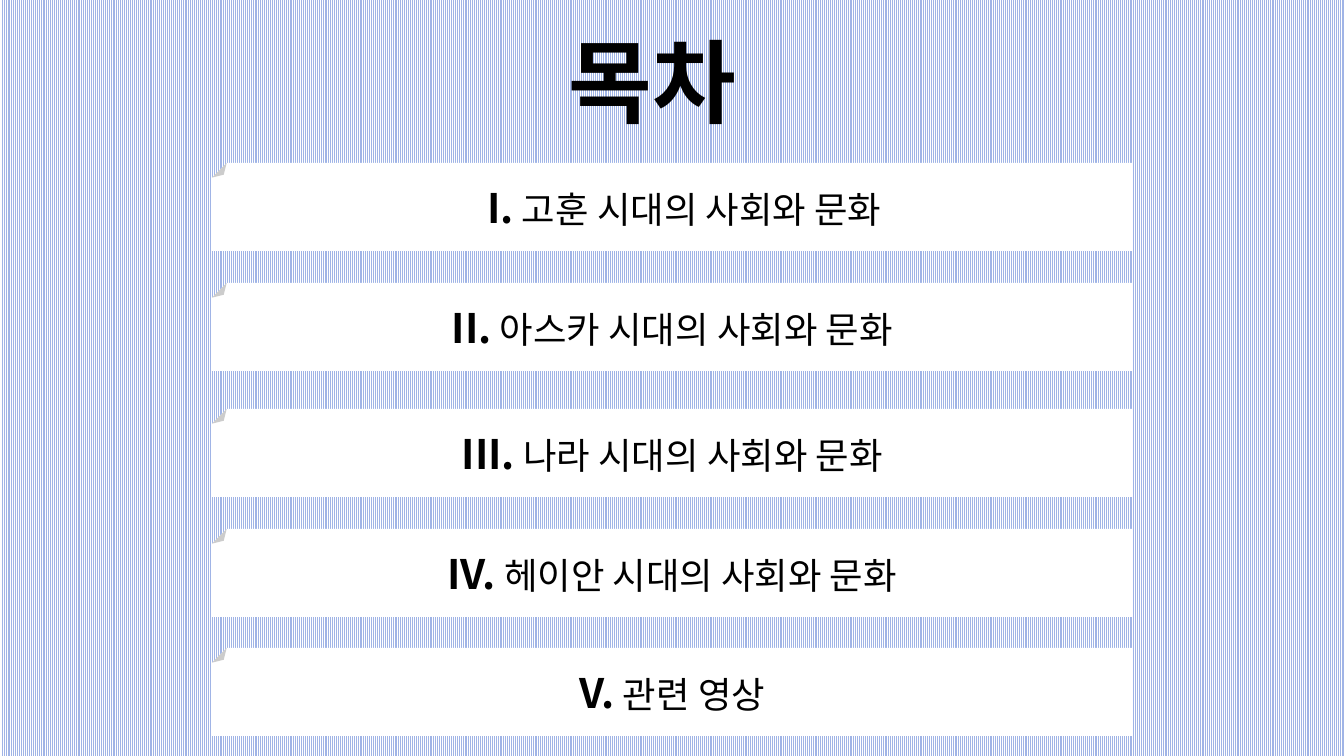
from lxml import etree
from pptx import Presentation
from pptx import util as u
from pptx.dml.color import RGBColor
from pptx.enum import dml, shapes, text
from pptx.oxml.ns import qn

PX = 914400 / 100.8
FONT = "Noto Sans CJK KR"
COLORS = {"stripe": "A0B4E6", "panel": "FFFFFF", "ink": "000000"}
ITEMS = [
    ("I.", "고훈 시대의 사회와 문화", 163, 236),
    ("II.", "아스카 시대의 사회와 문화", 283, 224),
    ("III.", "나라 시대의 사회와 문화", 409, 224),
    ("IV.", "헤이안 시대의 사회와 문화", 529, 224),
    ("V.", "관련 영상", 648, 224),
]


def box(*lengths):
    return [u.Emu(round(n * PX)) for n in lengths]


def write(sp, words, size, bold=False):
    tf = sp.text_frame
    tf.word_wrap = True
    tf.auto_size = text.MSO_AUTO_SIZE.NONE
    tf.vertical_anchor = text.MSO_ANCHOR.MIDDLE
    tf.margin_top = tf.margin_bottom = 0
    p = tf.paragraphs[0]
    p.alignment = text.PP_ALIGN.CENTER
    r = p.add_run()
    r.text = words
    r.font.name = FONT
    r.font.size = u.Pt(size)
    r.font.bold = bold
    r.font.color.rgb = RGBColor.from_string(COLORS["ink"])
    ea = etree.SubElement(r.font._element, qn("a:ea"))
    ea.set("typeface", FONT)


prs = Presentation()
prs.slide_width, prs.slide_height = box(1344, 756)
slide = prs.slides.add_slide(prs.slide_layouts[5])

fill = slide.background.fill
fill.patterned()
fill.pattern = dml.MSO_PATTERN.NARROW_VERTICAL
fill.fore_color.rgb = RGBColor.from_string(COLORS["stripe"])
fill.back_color.rgb = RGBColor.from_string(COLORS["panel"])

title = slide.shapes.title
title.left, title.top, title.width, title.height = box(466, 21, 373, 119)
write(title, "목차", size=65, bold=True)

for numeral, topic, top, text_left in ITEMS:
    panel = slide.shapes.add_shape(
        shapes.MSO_SHAPE.FOLDED_CORNER, *box(212, top, 920, 88))
    panel.shadow.inherit = False
    panel.fill.solid()
    panel.fill.fore_color.rgb = RGBColor.from_string(COLORS["panel"])
    panel.line.fill.background()
    xfrm = panel._element.spPr.find(qn("a:xfrm"))
    xfrm.set("flipH", "1")
    xfrm.set("flipV", "1")

    label = slide.shapes.add_textbox(*box(text_left, top + 15, 897, 58))
    write(label, numeral, size=29, bold=True)
    write(label, " " + topic, size=26)

prs.save("out.pptx")
